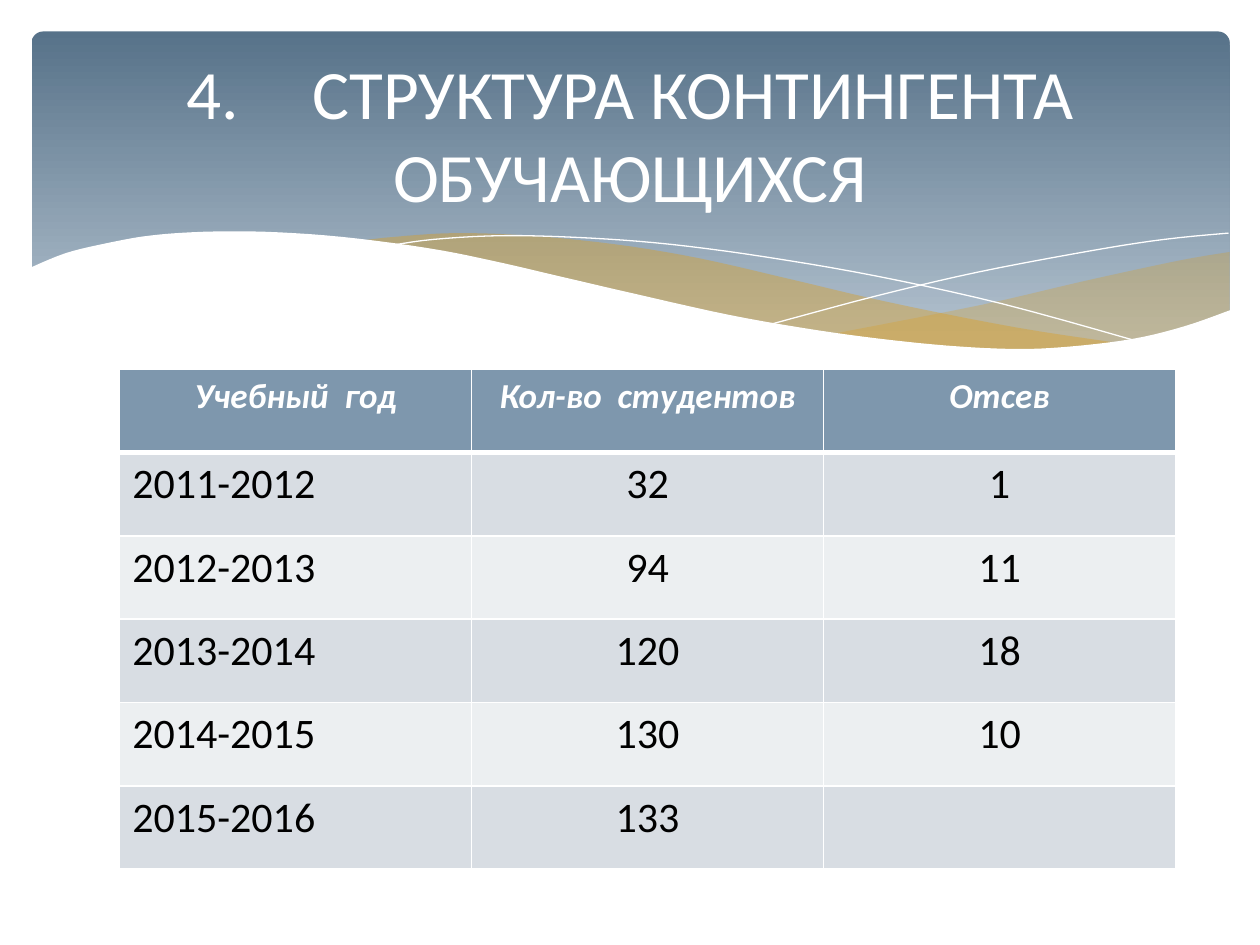
from lxml import etree
from pptx import Presentation
from pptx.dml.color import RGBColor
from pptx.enum import shapes, text
from pptx.oxml.ns import qn
from pptx.util import Inches, Pt

COLORS = {
    "top": "577289", "low": "B2C1CE", "gold": "DC9E1F", "white": "FFFFFF",
    "head": "7E97AD", "odd": "D8DDE3", "even": "ECEFF1", "black": "000000",
}
RGB = {name: RGBColor.from_string(code) for name, code in COLORS.items()}
FONT = "Calibri"

prs = Presentation()
prs.slide_width, prs.slide_height = Inches(10), Inches(7.5)
slide = prs.slides.add_slide(prs.slide_layouts[5])


def curve(knots, steps=5):
    """Return points of a smooth Catmull-Rom curve through the knots."""
    ends = [knots[0], *knots, knots[-1]]
    points = [knots[0]]
    for a, b, c, d in zip(ends, ends[1:], ends[2:], ends[3:]):
        for step in range(1, steps + 1):
            t = step / steps
            points.append(tuple(
                (2 * q + (r - p) * t + (2 * p - 5 * q + 4 * r - s) * t**2
                 + (3 * q - p - 3 * r + s) * t**3) / 2
                for p, q, r, s in zip(a, b, c, d)))
    return points


def draw(points, fill=None, alpha=100):
    """Draw a filled outline, or an open white hairline without a fill."""
    spots = [(Inches(x), Inches(y)) for x, y in points]
    build = slide.shapes.build_freeform(*spots[0])
    build.add_line_segments(spots[1:], close=fill is not None)
    shape = build.convert_to_shape()
    shape.shadow.inherit = False
    if fill is None:
        shape.fill.background()
        shape.line.color.rgb = RGB["white"]
        shape.line.width = Pt(0)
        return
    shape.line.fill.background()
    shape.fill.solid()
    shape.fill.fore_color.rgb = RGB[fill]
    if alpha < 100:
        color = next(shape.element.spPr.iter(qn("a:srgbClr")))
        etree.SubElement(color, qn("a:alpha"), val=str(alpha * 1000))


# Banner
banner = slide.shapes.add_shape(
    shapes.MSO_SHAPE.ROUNDED_RECTANGLE,
    Inches(0.25), Inches(0.25), Inches(9.51), Inches(2.7))
banner.adjustments[0] = 0.034
banner.shadow.inherit = False
banner.line.fill.background()
banner.fill.gradient()
banner.fill.gradient_angle = 270
for stop, place, name in zip(banner.fill.gradient_stops, (0, 0.9), ("top", "low")):
    stop.position = place
    stop.color.rgb = RGB[name]

# Waves
right = (curve([(9.76, 2), (9.35, 2.07), (8.61, 2.23), (7.79, 2.42), (6.61, 2.65)])
         + curve([(6.61, 2.65), (7.19, 2.72), (7.69, 2.77), (8.14, 2.78),
                  (8.63, 2.75), (9.13, 2.67), (9.49, 2.57), (9.76, 2.47)]))
draw(right, "gold", 29)

middle = (curve([(8.93, 2.73), (8.07, 2.6), (7.06, 2.4), (6.29, 2.22),
                 (5.55, 2.05), (4.89, 1.94), (4.2, 1.87), (3.61, 1.85),
                 (3.13, 1.88), (2.86, 1.91)])
          + curve([(2.86, 1.91), (3.62, 2.03), (4.49, 2.22), (5.3, 2.4),
                   (6.18, 2.58), (6.95, 2.7), (7.61, 2.77), (8.18, 2.78),
                   (8.57, 2.77), (8.93, 2.73)]))
draw(middle, "gold", 40)

draw(curve([(3.09, 1.95), (3.44, 1.9), (4.01, 1.87), (4.69, 1.89), (5.33, 1.94),
            (6.08, 2.04), (6.95, 2.19), (7.95, 2.41), (9.07, 2.72)]))
draw(curve([(6.13, 2.57), (6.95, 2.35), (7.76, 2.16), (8.66, 1.99),
            (9.24, 1.9), (9.75, 1.85)]))

front = curve([(9.77, 2.46), (9.4, 2.59), (8.99, 2.69), (8.5, 2.75), (8.09, 2.77),
               (7.61, 2.75), (7.08, 2.7), (6.48, 2.62), (5.79, 2.5), (5.03, 2.33),
               (4.47, 2.2), (3.91, 2.07), (3.4, 1.97), (2.71, 1.88), (2.11, 1.84),
               (1.61, 1.84), (1.19, 1.87), (0.85, 1.93), (0.52, 2.01), (0.23, 2.13)])
draw(front + [(0.23, 3.29), (9.77, 3.29)], "white")

# Table
rows = [
    ("Учебный  год", "Кол-во  студентов", "Отсев"),
    ("2011-2012", "32", "1"),
    ("2012-2013", "94", "11"),
    ("2013-2014", "120", "18"),
    ("2014-2015", "130", "10"),
    ("2015-2016", "133", ""),
]
table = slide.shapes.add_table(
    len(rows), 3, Inches(0.95), Inches(2.93), Inches(8.38), Inches(3.97)).table
for i, row in enumerate(rows):
    head = i == 0
    for j, word in enumerate(row):
        cell = table.cell(i, j)
        cell.text_frame.text = word
        para = cell.text_frame.paragraphs[0]
        if head or j:
            para.alignment = text.PP_ALIGN.CENTER
        for run in para.runs:
            run.font.name = FONT
            run.font.size = Pt(20 if head else 24)
            run.font.bold = run.font.italic = head
            run.font.color.rgb = RGB["white" if head else "black"]

        props = cell._tc.get_or_add_tcPr()
        for side in ("lnL", "lnR", "lnT", "lnB"):
            thick = (head and side == "lnB") or (i == 1 and side == "lnT")
            line = etree.SubElement(props, qn(f"a:{side}"), w=str(Pt(3 if thick else 1)))
            solid = etree.SubElement(line, qn("a:solidFill"))
            etree.SubElement(solid, qn("a:srgbClr"), val=COLORS["white"])
        cell.fill.solid()
        cell.fill.fore_color.rgb = RGB["head" if head else "odd" if i % 2 else "even"]

# Title, brought in front of the banner
title = slide.shapes.title
slide.shapes.element.append(title.element)
title.left, title.top = Inches(0.5), Inches(0.37)
title.width, title.height = Inches(9), Inches(1.37)
frame = title.text_frame
frame.text = "4.\tСТРУКТУРА КОНТИНГЕНТА ОБУЧАЮЩИХСЯ"
frame.word_wrap = True
frame.auto_size = text.MSO_AUTO_SIZE.NONE
frame.vertical_anchor = text.MSO_ANCHOR.MIDDLE
para = frame.paragraphs[0]
para.alignment = text.PP_ALIGN.CENTER
next(title.element.iter(qn("a:pPr"))).set("defTabSz", str(Inches(1)))
for run in para.runs:
    run.font.name = FONT
    run.font.size = Pt(39.6)
    run.font.color.rgb = RGB["white"]

prs.save("out.pptx")
